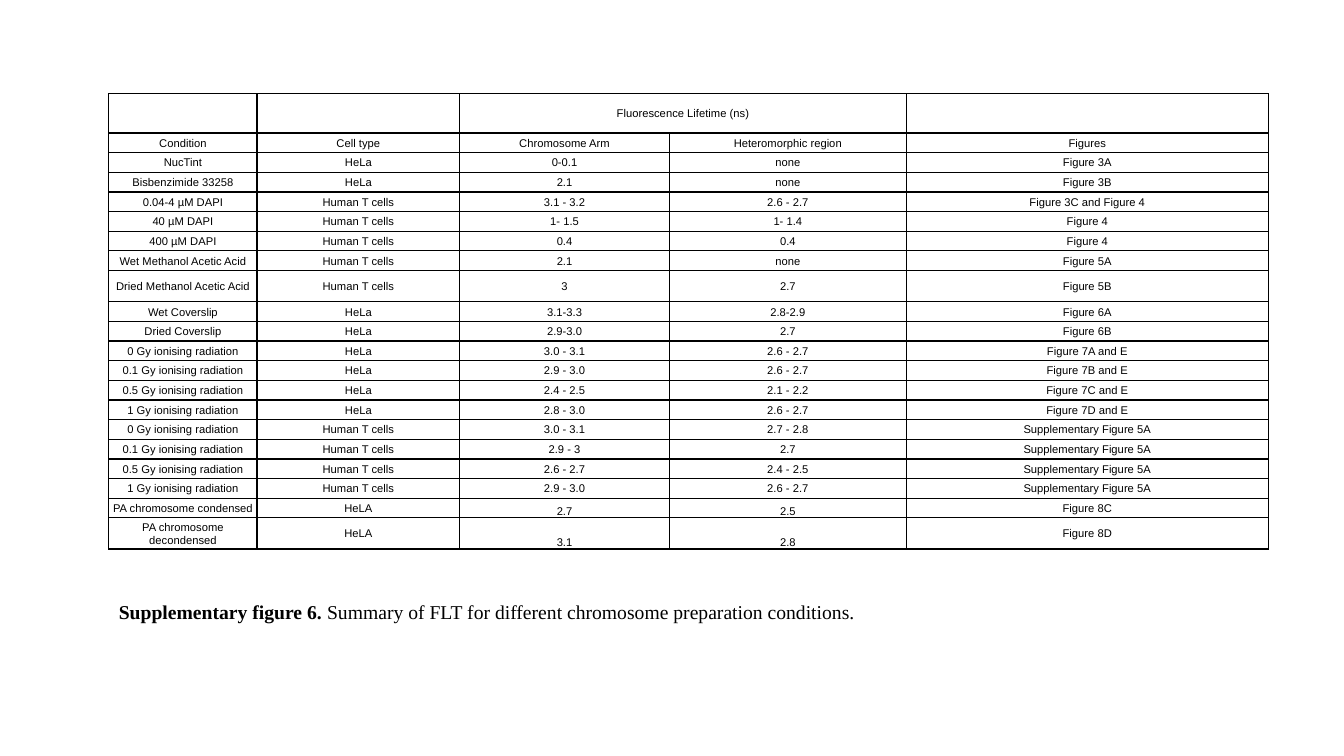
from lxml import etree
from pptx import Presentation
from pptx.dml.color import RGBColor
from pptx.enum.text import MSO_ANCHOR, PP_ALIGN
from pptx.oxml.ns import qn
from pptx.util import Inches, Pt

CENTER, LEFT = PP_ALIGN.CENTER, PP_ALIGN.LEFT
MIDDLE, BOTTOM = MSO_ANCHOR.MIDDLE, MSO_ANCHOR.BOTTOM

COLORS = {"ink": "000000"}

ROWS = [
    ("", "", "Fluorescence Lifetime (ns)", "", ""),
    ("Condition", "Cell type", "Chromosome Arm", "Heteromorphic region", "Figures"),
    ("NucTint", "HeLa", "0-0.1", "none", "Figure 3A"),
    ("Bisbenzimide 33258", "HeLa", "2.1", "none", "Figure 3B"),
    ("0.04-4 µM DAPI", "Human T cells", "3.1 - 3.2", "2.6 - 2.7", "Figure 3C and Figure 4"),
    ("40 µM DAPI", "Human T cells", "1- 1.5", "1- 1.4", "Figure 4"),
    ("400 µM DAPI", "Human T cells", "0.4", "0.4", "Figure 4"),
    ("Wet Methanol Acetic Acid", "Human T cells", "2.1", "none", "Figure 5A"),
    ("Dried Methanol Acetic Acid", "Human T cells", "3", "2.7", "Figure 5B"),
    ("Wet Coverslip", "HeLa", "3.1-3.3", "2.8-2.9", "Figure 6A"),
    ("Dried Coverslip", "HeLa", "2.9-3.0", "2.7", "Figure 6B"),
    ("0 Gy ionising radiation", "HeLa", "3.0 - 3.1", "2.6 - 2.7", "Figure 7A and E"),
    ("0.1 Gy ionising radiation", "HeLa", "2.9 - 3.0", "2.6 - 2.7", "Figure 7B and E"),
    ("0.5 Gy ionising radiation", "HeLa", "2.4 - 2.5", "2.1 - 2.2", "Figure 7C and E"),
    ("1 Gy ionising radiation", "HeLa", "2.8 - 3.0", "2.6 - 2.7", "Figure 7D and E"),
    ("0 Gy ionising radiation", "Human T cells", "3.0 - 3.1", "2.7 - 2.8", "Supplementary Figure 5A"),
    ("0.1 Gy ionising radiation", "Human T cells", "2.9 - 3", "2.7", "Supplementary Figure 5A"),
    ("0.5 Gy ionising radiation", "Human T cells", "2.6 - 2.7", "2.4 - 2.5", "Supplementary Figure 5A"),
    ("1 Gy ionising radiation", "Human T cells", "2.9 - 3.0", "2.6 - 2.7", "Supplementary Figure 5A"),
    ("PA chromosome condensed", "HeLA", "2.7", "2.5", "Figure 8C"),
    ("PA chromosome decondensed", "HeLA", "3.1", "2.8", "Figure 8D"),
]
CAPTION = [
    ("Supplementary figure 6. ", True),
    ("Summary of FLT for different chromosome preparation conditions.", False),
]

TABLE_LEFT, TABLE_TOP, TABLE_HEIGHT = 1.08, 0.93, 4.52
COLUMN_WIDTHS = [1.47, 2.01, 2.08, 2.35, 3.59]
TALL_ROWS = {0: 0.39, 8: 0.31, 20: 0.31}
LIFETIME_COLUMNS = (2, 3)
BOTTOM_ROWS = (19, 20)
BORDER_WIDTH = Pt(1)


def add_text(paragraph, text, size=8, font="Arial", bold=False, align=CENTER):
    paragraph.alignment = align
    run = paragraph.add_run()
    run.text = text
    run.font.size = Pt(size)
    run.font.name = font
    run.font.bold = bold
    run.font.color.rgb = RGBColor.from_string(COLORS["ink"])


def add_borders(cell):
    properties = cell._tc.get_or_add_tcPr()
    for side in ("a:lnL", "a:lnR", "a:lnT", "a:lnB"):
        line = etree.SubElement(properties, qn(side), w=str(BORDER_WIDTH))
        fill = etree.SubElement(line, qn("a:solidFill"))
        etree.SubElement(fill, qn("a:srgbClr"), val=COLORS["ink"])


def add_lifetime_table(slide):
    plain_height = (TABLE_HEIGHT - sum(TALL_ROWS.values())) / (len(ROWS) - len(TALL_ROWS))
    frame = slide.shapes.add_table(
        len(ROWS), len(COLUMN_WIDTHS), Inches(TABLE_LEFT), Inches(TABLE_TOP),
        Inches(sum(COLUMN_WIDTHS)), Inches(TABLE_HEIGHT))
    table = frame.table
    table.first_row = False
    table.horz_banding = False
    for column, width in zip(table.columns, COLUMN_WIDTHS):
        column.width = Inches(width)
    for row_index, values in enumerate(ROWS):
        table.rows[row_index].height = Inches(TALL_ROWS.get(row_index, plain_height))
        for column_index, text in enumerate(values):
            cell = table.cell(row_index, column_index)
            cell.margin_left = cell.margin_right = cell.margin_top = Inches(0.01)
            cell.margin_bottom = 0
            at_bottom = row_index in BOTTOM_ROWS and column_index in LIFETIME_COLUMNS
            cell.vertical_anchor = BOTTOM if at_bottom else MIDDLE
            add_borders(cell)
            cell.fill.background()
            if text:
                add_text(cell.text_frame.paragraphs[0], text)
    first, last = LIFETIME_COLUMNS
    table.cell(0, first).merge(table.cell(0, last))


def add_caption(slide):
    box = slide.shapes.add_textbox(Inches(1.08), Inches(5.9), Inches(8.98), Inches(0.34))
    box.text_frame.word_wrap = True
    for text, bold in CAPTION:
        add_text(box.text_frame.paragraphs[0], text, size=14,
                 font="Times New Roman", bold=bold, align=LEFT)


def main():
    presentation = Presentation()
    presentation.slide_width = Inches(13.33)
    presentation.slide_height = Inches(7.5)
    slide = presentation.slides.add_slide(presentation.slide_layouts.get_by_name("Blank"))
    add_lifetime_table(slide)
    add_caption(slide)
    presentation.save("out.pptx")


if __name__ == "__main__":
    main()
